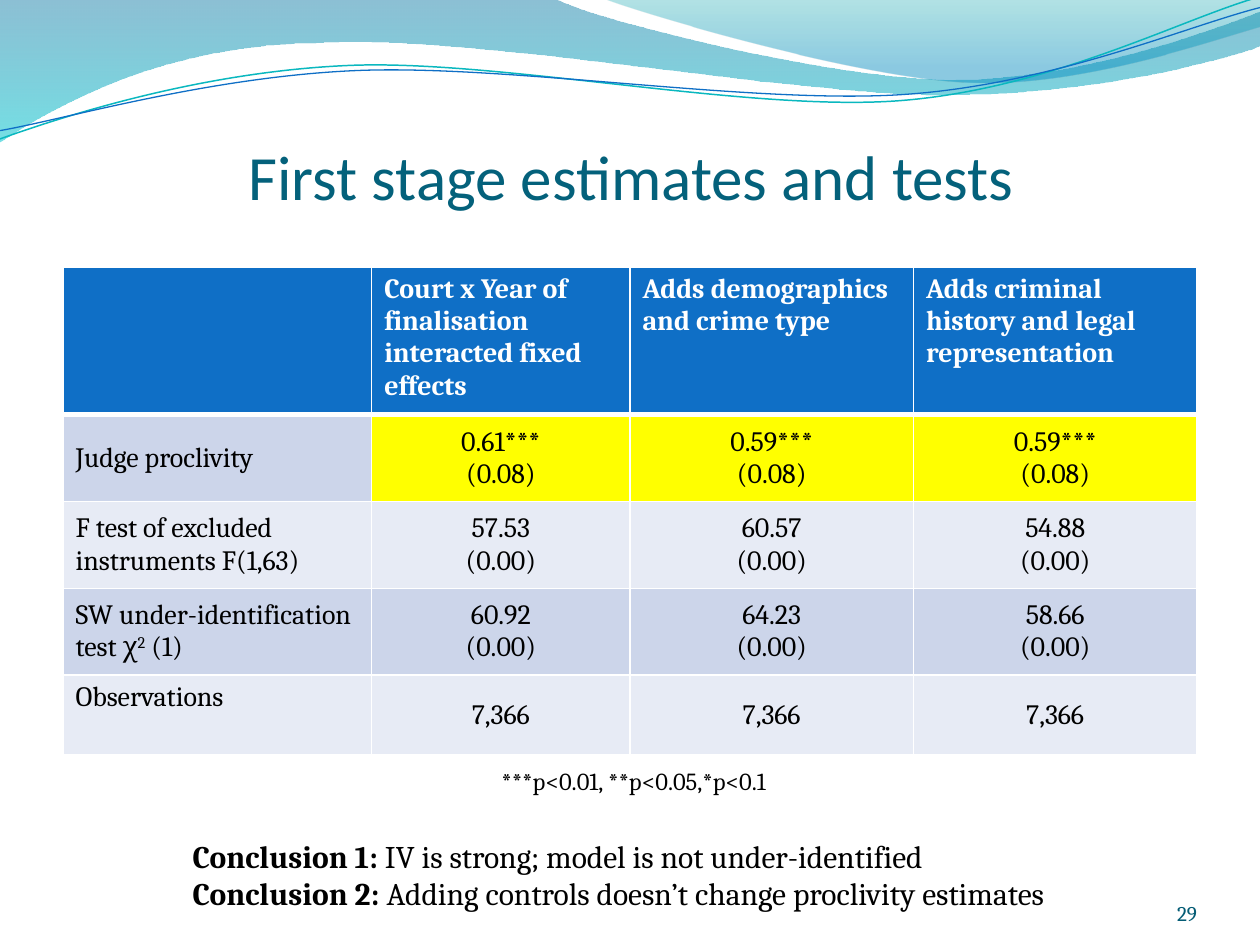
from math import cos, radians, sin

from lxml import etree
from pptx import Presentation
from pptx.dml.color import RGBColor
from pptx.enum.text import MSO_ANCHOR, MSO_AUTO_SIZE, PP_ALIGN
from pptx.oxml.ns import qn
from pptx.util import Inches, Pt

LEFT, CENTER, RIGHT = PP_ALIGN.LEFT, PP_ALIGN.CENTER, PP_ALIGN.RIGHT
TOP, MIDDLE, BOTTOM = MSO_ANCHOR.TOP, MSO_ANCHOR.MIDDLE, MSO_ANCHOR.BOTTOM
NO_RESIZE = MSO_AUTO_SIZE.NONE

COLORS = {
    "title": "04617B", "number": "045C75", "header": "0F6FC6",
    "odd": "CCD5EA", "even": "E7EBF5", "highlight": "FFFF00",
    "white": "FFFFFF", "black": "000000", "teal line": "0AB8BF", "blue line": "0F6FC6",
    "band start": "0074A1", "band end": "00C6CF", "fan start": "00A1A9", "fan end": "008BBF",
}
BANDS = [
    {"points": [(0, -0.01), (4.4, -0.01), [(4.76, 0.17), (6.64, 0.63), (7.58, 0.63)],
                [(8.53, 0.63), (9.58, 0.26), (10, 0.09)], (10.01, 0.36),
                [(9.83, 0.44), (8.7, 0.76), (7.46, 0.75)],
                [(6.22, 0.75), (3.82, 0.28), (2.57, 0.34)],
                [(1.29, 0.35), (0.46, 0.83), (-0.01, 1.13)], (0, -0.01)],
     "stops": [(0, "band start", 45), (1, "band end", 55)]},
    {"points": [(4.79, -0.01), [(5.09, 0.11), (6.82, 0.62), (7.69, 0.65)],
                [(8.56, 0.69), (9.61, 0.32), (10, 0.21)], (10, 0), (4.79, -0.01)],
     "stops": [(0, "fan start", 30), (0.8, "fan end", 45)]},
]
WAVE_ROTATION = 357.3
WAVE_CENTER = (4.99, 0.58)
WAVES = [
    ("teal line", 0.85, [(-0.02, 1.11), [(0.48, 0.93), (1.58, 0.57), (2.77, 0.52)],
                         [(3.95, 0.47), (5.93, 0.89), (7.13, 0.8)],
                         [(8.33, 0.71), (9.38, 0.15), (9.98, -0.02)]]),
    ("blue line", 0.75, [(-0.02, 1.04), [(0.47, 0.96), (1.64, 0.61), (2.83, 0.56)],
                         [(4.03, 0.51), (5.97, 0.83), (7.17, 0.75)],
                         [(8.36, 0.67), (9.41, 0.21), (10, 0.06)]]),
]
TITLE = "First stage estimates and tests"
ROWS = [
    ["", "Court x Year of finalisation interacted fixed effects",
     "Adds demographics and crime type", "Adds criminal history and legal representation"],
    ["Judge proclivity", "0.61***\n(0.08)", "0.59***\n(0.08)", "0.59***\n(0.08)"],
    ["F test of excluded instruments F(1,63)", "57.53\n(0.00)", "60.57\n(0.00)", "54.88\n(0.00)"],
    [("SW under-identification test χ", "2", " (1)"),
     "60.92\n(0.00)", "64.23\n(0.00)", "58.66\n(0.00)"],
    ["Observations", "7,366", "7,366", "7,366"],
]
COLUMN_WIDTHS = [2.45, 2.05, 2.25, 2.25]
ROW_HEIGHTS = [1.17, 0.69, 0.69, 0.69, 0.63]
HIGHLIGHT_ROW = 1
NOTE = "***p<0.01, **p<0.05,*p<0.1"
CONCLUSIONS = [
    ("Conclusion 1:", " IV is strong; model is not under-identified"),
    ("Conclusion 2:", " Adding controls doesn’t change proclivity estimates"),
]


def rgb(name):
    return RGBColor.from_string(COLORS[name])


def format_run(run, size, color, bold=False, font="Cambria"):
    run.font.size, run.font.bold, run.font.name = Pt(size), bold, font
    run.font.color.rgb = rgb(color)


def turn_back(point):
    angle = radians(360 - WAVE_ROTATION)
    x, y = (value - middle for value, middle in zip(point, WAVE_CENTER))
    return (WAVE_CENTER[0] + x * cos(angle) - y * sin(angle),
            WAVE_CENTER[1] + x * sin(angle) + y * cos(angle))


def add_curve(slide, points, close):
    segments = [[tuple(map(Inches, point)) for point in (part if isinstance(part, list) else [part])]
                for part in points]
    ends = [segment[-1] for segment in segments]
    builder = slide.shapes.build_freeform(*ends[0], scale=1)
    builder.add_line_segments(ends[1:], close=close)
    shape = builder.convert_to_shape()
    shape.shadow.inherit = False
    lines = list(shape._element.iter(qn("a:lnTo")))
    for line, (*controls, _) in zip(lines, segments[1:]):
        if controls:
            curve = etree.Element(qn("a:cubicBezTo"))
            for x, y in controls:
                etree.SubElement(curve, qn("a:pt"), x=str(x - shape.left), y=str(y - shape.top))
            curve.append(line[0])
            line.getparent().replace(line, curve)
    return shape


def add_band(slide, points, stops):
    shape = add_curve(slide, points, True)
    shape.line.fill.background()
    shape.fill.gradient()
    shape.fill.gradient_angle = 270
    for stop, (position, color, _) in zip(shape.fill.gradient_stops, stops):
        stop.position = position
        stop.color.rgb = rgb(color)
    gradient = shape._element.spPr.find(qn("a:gradFill"))
    for color, (_, _, opacity) in zip(gradient.iter(qn("a:srgbClr")), stops):
        etree.SubElement(color, qn("a:alpha"), val=str(opacity * 1000))


def add_wave(slide, color, width, points):
    level = [[turn_back(point) for point in part] if isinstance(part, list) else turn_back(part)
             for part in points]
    shape = add_curve(slide, level, False)
    shape.rotation = WAVE_ROTATION
    shape.fill.background()
    shape.line.color.rgb = rgb(color)
    shape.line.width = Pt(width)


def add_text(slide, box, paragraphs, size, color, align=LEFT):
    frame = slide.shapes.add_textbox(*map(Inches, box)).text_frame
    frame.word_wrap = True
    frame.text = "\n".join(lead + rest for lead, rest in paragraphs)
    for paragraph, (lead, rest) in zip(frame.paragraphs, paragraphs):
        paragraph.alignment = align
        if lead:
            paragraph.runs[0].text = lead
            paragraph.add_run().text = rest
        for run in paragraph.runs:
            format_run(run, size, color, run.text == lead)
    return frame


def set_borders(cell, row):
    properties = cell._tc.get_or_add_tcPr()
    widths = {"L": 1, "R": 1, "T": 3 if row == 1 else 1, "B": 3 if row == 0 else 1}
    for side, width in widths.items():
        line = etree.SubElement(properties, qn(f"a:ln{side}"), w=str(Pt(width)))
        fill = etree.SubElement(line, qn("a:solidFill"))
        etree.SubElement(fill, qn("a:srgbClr"), val=COLORS["white"])


def fill_cell(cell, content, row, column):
    set_borders(cell, row)
    if row == 0:
        color = "header"
    elif row == HIGHLIGHT_ROW and column:
        color = "highlight"
    else:
        color = "odd" if row % 2 else "even"
    cell.fill.solid()
    cell.fill.fore_color.rgb = rgb(color)
    cell.vertical_anchor = TOP if row == 0 or content == "Observations" else MIDDLE
    if isinstance(content, tuple):
        for text in content:
            cell.text_frame.paragraphs[0].add_run().text = text
        cell.text_frame.paragraphs[0].runs[1].font._element.set("baseline", "30000")
    else:
        cell.text_frame.text = content
    for paragraph in cell.text_frame.paragraphs:
        paragraph.alignment = CENTER if row and column else LEFT
        for run in paragraph.runs:
            format_run(run, 16, "black" if row else "white", row == 0)


def add_estimates(slide):
    box = map(Inches, (0.5, 2.12, sum(COLUMN_WIDTHS), sum(ROW_HEIGHTS)))
    table = slide.shapes.add_table(len(ROWS), len(COLUMN_WIDTHS), *box).table
    for column, width in zip(table.columns, COLUMN_WIDTHS):
        column.width = Inches(width)
    for row, height in zip(table.rows, ROW_HEIGHTS):
        row.height = Inches(height)
    for row, contents in enumerate(ROWS):
        for column, content in enumerate(contents):
            fill_cell(table.cell(row, column), content, row, column)


def set_margins(frame, top):
    frame.margin_left = frame.margin_right = frame.margin_bottom = 0
    frame.margin_top = Inches(top)
    frame.vertical_anchor = BOTTOM


def add_title(slide):
    title = slide.shapes.title
    title.left, title.top, title.width, title.height = map(Inches, (0.51, 0.44, 9, 1.25))
    frame = title.text_frame
    frame.text = TITLE
    frame.auto_size = NO_RESIZE
    set_margins(frame, 0.05)
    frame.paragraphs[0].alignment = CENTER
    format_run(frame.paragraphs[0].runs[0], 36, "title", font="Calibri")


def main():
    """Build the slide of first stage estimates and save it."""
    presentation = Presentation()
    presentation.slide_width, presentation.slide_height = Inches(10), Inches(7.5)
    slide = presentation.slides.add_slide(presentation.slide_layouts[5])
    for band in BANDS:
        add_band(slide, **band)
    for wave in WAVES:
        add_wave(slide, *wave)
    add_title(slide)
    add_estimates(slide)
    number = add_text(slide, (8.67, 6.95, 0.83, 0.4), [("", "29")], 12, "number", RIGHT)
    set_margins(number, 0)
    add_text(slide, (1.84, 6.03, 6.38, 0.34), [("", NOTE)], 14, "black", CENTER)
    add_text(slide, (1.43, 6.59, 7.4, 0.71), CONCLUSIONS, 18, "black")
    presentation.save("out.pptx")


if __name__ == "__main__":
    main()
